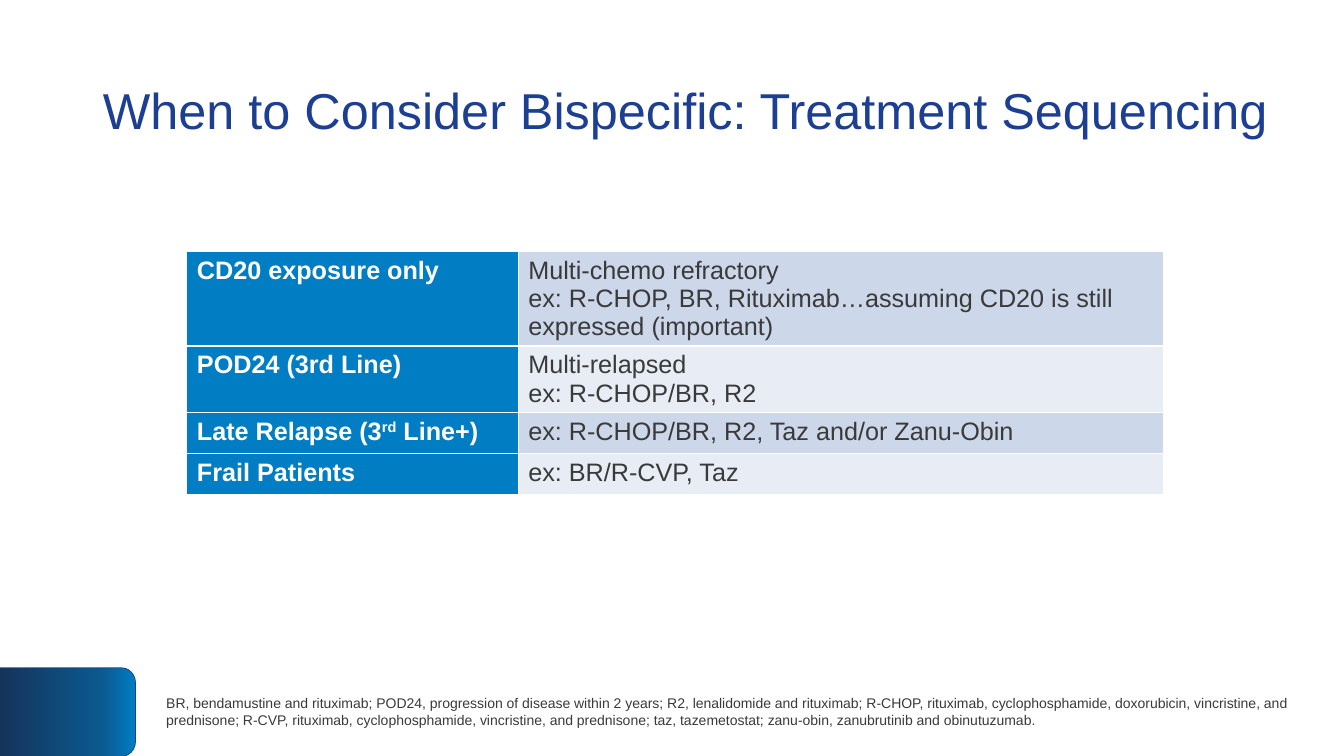
from copy import deepcopy
from dataclasses import dataclass

from lxml.etree import SubElement
from pptx import Presentation
from pptx.dml.color import RGBColor
from pptx.enum.shapes import MSO_SHAPE as Preset
from pptx.enum.text import MSO_ANCHOR as Anchor, PP_ALIGN as Align
from pptx.oxml.ns import qn
from pptx.util import Cm, Pt

FONT = "Arial"
NAVY = RGBColor(0x1C, 0x3F, 0x93)
BLUE = RGBColor(0x00, 0x7D, 0xC3)
MID_BLUE = RGBColor(0x0B, 0x59, 0x8F)
DARK_BLUE = RGBColor(0x15, 0x34, 0x5A)
GREY = RGBColor(0x3A, 0x3A, 0x3A)
WHITE = RGBColor(0xFF, 0xFF, 0xFF)
BANDS = (RGBColor(0xCC, 0xD7, 0xE9), RGBColor(0xE7, 0xEC, 0xF5))


@dataclass(frozen=True)
class Setting:
    label: tuple[str, ...]  # every second part is superscript
    lines: tuple[str, ...]
    height: float


SETTINGS = (
    Setting(("CD20 exposure only",),
            ("Multi-chemo refractory",
             "ex: R-CHOP, BR, Rituximab…assuming CD20 is still expressed (important)"), 2.38),
    Setting(("POD24 (3rd Line)",), ("Multi-relapsed", "ex: R-CHOP/BR, R2"), 1.66),
    Setting(("Late Relapse (3", "rd", " Line+)"),
            ("ex: R-CHOP/BR, R2, Taz and/or Zanu-Obin",), 1.04),
    Setting(("Frail Patients",), ("ex: BR/R-CVP, Taz",), 1.04),
)
COLUMN_WIDTHS = (8.35, 16.26)
ABBREVIATIONS = (
    "BR, bendamustine and rituximab; POD24, progression of disease within 2 years; "
    "R2, lenalidomide and rituximab; R-CHOP, rituximab, cyclophosphamide, doxorubicin, "
    "vincristine, and prednisone; R-CVP, rituximab, cyclophosphamide, vincristine, and "
    "prednisone; taz, tazemetostat; zanu-obin, zanubrutinib and obinutuzumab."
)


def add_run(paragraph, text: str, size: float, color: RGBColor,
            bold: bool = False, superscript: bool = False) -> None:
    run = paragraph.add_run()
    run.text = text
    run.font.name, run.font.size, run.font.bold = FONT, Pt(size), bold
    run.font.color.rgb = color
    if superscript:
        run.font._element.set("baseline", "30000")


def format_cell(cell, fill: RGBColor) -> None:
    properties = cell._tc.get_or_add_tcPr()
    for side in ("a:lnL", "a:lnR", "a:lnT", "a:lnB"):
        border = SubElement(properties, qn(side), w=str(Pt(1)))
        solid = SubElement(border, qn("a:solidFill"))
        SubElement(solid, qn("a:srgbClr"), val=str(WHITE))
    cell.fill.solid()
    cell.fill.fore_color.rgb = fill


def add_corner_tab(slide) -> None:
    tab = slide.shapes.add_shape(Preset.ROUND_2_SAME_RECTANGLE,
                                 Cm(0.58), Cm(16.23), Cm(2.24), Cm(3.43))
    tab.rotation = 90
    tab.shadow.inherit = False
    tab.line.color.rgb, tab.line.width = NAVY, Pt(0.5)
    tab.fill.gradient()
    tab.fill.gradient_angle = 270
    stop_list = tab._element.spPr.find(qn("a:gradFill")).find(qn("a:gsLst"))
    stop_list.insert(1, deepcopy(stop_list[0]))
    stops = ((0, BLUE), (0.25, MID_BLUE), (1, DARK_BLUE))
    for stop, (position, color) in zip(tab.fill.gradient_stops, stops):
        stop.position, stop.color.rgb = position, color


def add_title(slide, text: str) -> None:
    title = slide.shapes.title
    title.left, title.top, title.width, title.height = Cm(2.34), Cm(1.02), Cm(30.23), Cm(3.68)
    title.text_frame.vertical_anchor = Anchor.MIDDLE
    heading = title.text_frame.paragraphs[0]
    heading.alignment, heading.line_spacing = Align.LEFT, 0.9
    add_run(heading, text, 36, NAVY)


def add_settings_table(slide) -> None:
    frame = slide.shapes.add_table(len(SETTINGS), len(COLUMN_WIDTHS), Cm(4.71), Cm(6.33),
                                   Cm(sum(COLUMN_WIDTHS)), Cm(sum(s.height for s in SETTINGS)))
    table = frame.table
    table.first_row, table.first_col = False, True
    for column, width in zip(table.columns, COLUMN_WIDTHS):
        column.width = Cm(width)
    for index, (row, setting) in enumerate(zip(table.rows, SETTINGS)):
        row.height = Cm(setting.height)
        label, regimens = row.cells
        format_cell(label, BLUE)
        format_cell(regimens, BANDS[index % 2])
        for part, text in enumerate(setting.label):
            add_run(label.text_frame.paragraphs[0], text, 18, WHITE, True, part % 2 == 1)
        for number, line in enumerate(setting.lines):
            body = regimens.text_frame
            paragraph = body.add_paragraph() if number else body.paragraphs[0]
            add_run(paragraph, line, 18, GREY)


def add_abbreviations(slide) -> None:
    footnote = slide.shapes.add_textbox(Cm(3.94), Cm(16.81), Cm(29.57), Cm(2.24)).text_frame
    footnote.word_wrap = True
    footnote.vertical_anchor = Anchor.MIDDLE
    add_run(footnote.paragraphs[0], ABBREVIATIONS, 10, GREY)


def main() -> None:
    deck = Presentation()
    deck.slide_width, deck.slide_height = Cm(33.87), Cm(19.05)
    slide = deck.slides.add_slide(deck.slide_layouts[5])
    slide.background.fill.solid()
    slide.background.fill.fore_color.rgb = WHITE

    # Corner decoration and heading
    add_corner_tab(slide)
    add_title(slide, "When to Consider Bispecific: Treatment Sequencing")

    # Treatment settings and footnote
    add_settings_table(slide)
    add_abbreviations(slide)
    deck.save("out.pptx")


if __name__ == "__main__":
    main()
